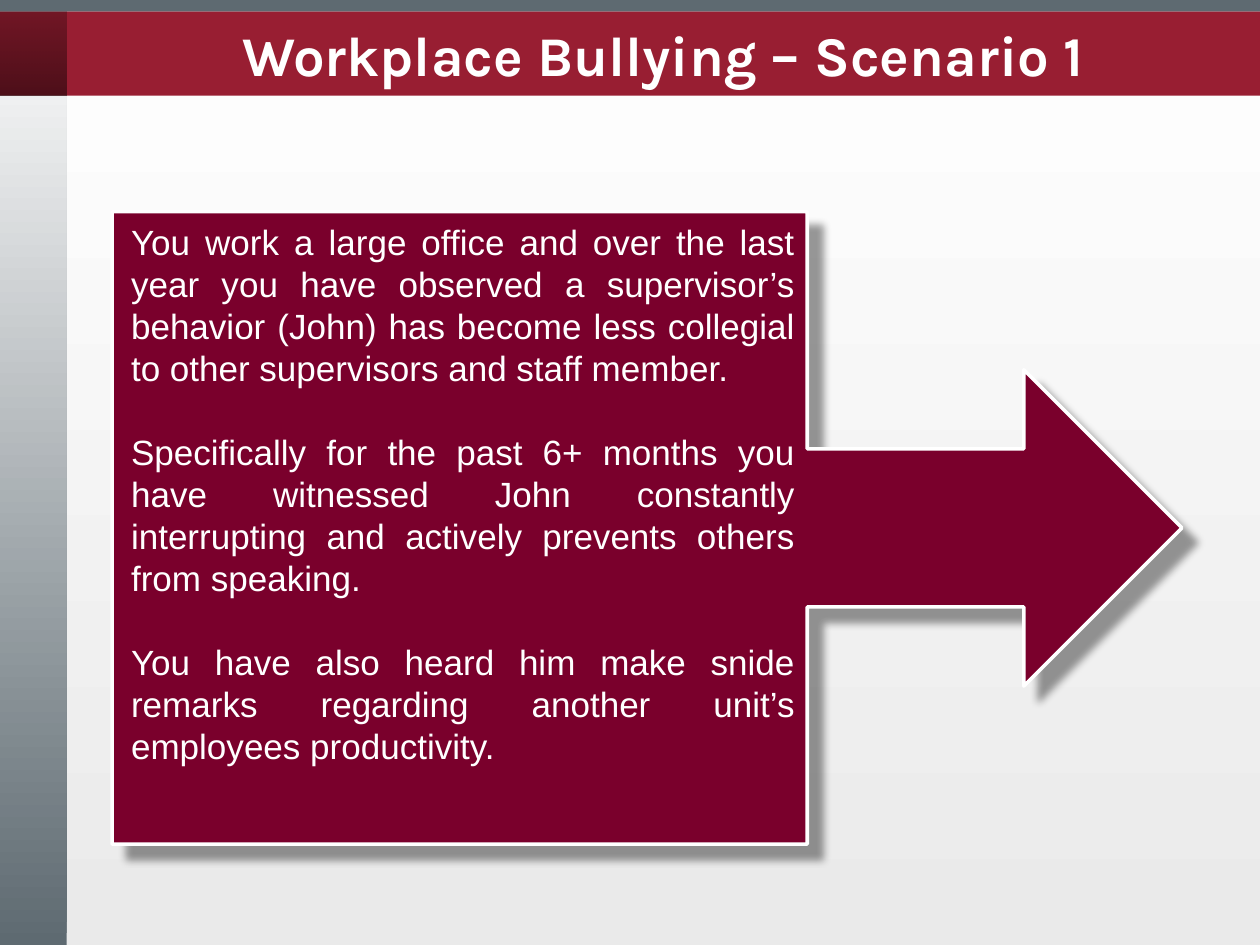
from dataclasses import dataclass

from lxml.etree import SubElement
from pptx import Presentation
from pptx.dml.color import RGBColor
from pptx.enum.shapes import MSO_SHAPE as Shape
from pptx.enum.text import MSO_ANCHOR as Anchor, MSO_AUTO_SIZE as AutoSize, PP_ALIGN as Align
from pptx.oxml.ns import qn
from pptx.util import Inches, Pt

TITLE = "Workplace Bullying – Scenario 1"
SCENARIO = [
    "You work a large office and over the last year you have observed a supervisor’s "
    "behavior (John) has become less collegial to other supervisors and staff member.",
    "Specifically for the past 6+ months you have witnessed John constantly "
    "interrupting and actively prevents others from speaking.",
    "You have also heard him make snide remarks regarding another unit’s "
    "employees productivity.",
]


@dataclass(frozen=True)
class Theme:
    white: str = "FFFFFF"
    black: str = "000000"
    mist: str = "EAEAEA"
    slate: str = "5E6A71"
    crimson: str = "981E32"
    maroon: str = "7A002C"
    title_font: str = "Karla"
    body_font: str = "Arial"
    title_size: int = 32
    body_size: int = 20


THEME = Theme()
WIDTH, HEIGHT = 10, 7.5
SIDEBAR, STRIP, BANNER, BLEED = 0.53, 0.09, 0.67, 0.02
BANNER_END = STRIP + BANNER
TITLE_TOP = 0.17


def box(left, top, width, height):
    return [Inches(length) for length in (left, top, width, height)]


def fade_up(fill, bottom, top, alphas=()):
    """Vertical gradient from the bottom colour to the top one, with optional opacity percents."""
    fill.gradient()
    fill.gradient_angle = 90
    for stop, color in zip(fill.gradient_stops, (bottom, top)):
        stop.color.rgb = RGBColor.from_string(color)
    if alphas:
        colors = fill._xPr.iter(qn("a:srgbClr"))
        for color, alpha in zip(colors, alphas):
            SubElement(color, qn("a:alpha"), val=str(alpha * 1000))


def add_panel(slide, place, color=None, fade=None, kind=Shape.RECTANGLE):
    panel = slide.shapes.add_shape(kind, *box(*place))
    panel.shadow.inherit = False
    panel.line.fill.background()
    if fade:
        fade_up(panel.fill, *fade)
    else:
        panel.fill.solid()
        panel.fill.fore_color.rgb = RGBColor.from_string(color)
    return panel


def cast_shadow(panel, color, alpha, blur, distance, angle):
    effects = panel._element.spPr.find(qn("a:effectLst"))
    shadow = SubElement(
        effects, qn("a:outerShdw"), blurRad=str(Pt(blur)), dist=str(Pt(distance)),
        dir=str(angle * 60000), algn="tl", rotWithShape="0")
    tint = SubElement(shadow, qn("a:srgbClr"), val=color)
    SubElement(tint, qn("a:alpha"), val=str(alpha * 1000))


def write(holder, place, paragraphs, *, font, size, color, bold=False,
          align=Align.LEFT, anchor=Anchor.TOP, spacing=1.0, gap=0):
    """Place a placeholder in front of the panels and fill it with unbulleted paragraphs."""
    holder.left, holder.top, holder.width, holder.height = box(*place)
    holder.element.getparent().append(holder.element)
    frame = holder.text_frame
    frame.word_wrap = True
    frame.auto_size = AutoSize.NONE
    frame.vertical_anchor = anchor
    for index, text in enumerate(paragraphs):
        paragraph = frame.add_paragraph() if index else frame.paragraphs[0]
        props = paragraph._p.get_or_add_pPr()
        props.set("marL", "0")
        props.set("indent", "0")
        SubElement(props, qn("a:buNone"))
        paragraph.alignment = align
        paragraph.line_spacing = spacing
        paragraph.space_before = Pt(gap if index else 0)
        paragraph.space_after = Pt(0)
        run = paragraph.add_run()
        run.text = text
        run.font.name, run.font.size, run.font.bold = font, Pt(size), bold
        run.font.color.rgb = RGBColor.from_string(color)


def main():
    deck = Presentation()
    deck.slide_width, deck.slide_height = Inches(WIDTH), Inches(HEIGHT)
    slide = deck.slides.add_slide(deck.slide_layouts[1])
    fade_up(slide.background.fill, THEME.mist, THEME.white)

    add_panel(slide, (0, 0, SIDEBAR, HEIGHT), fade=(THEME.slate, THEME.white))
    add_panel(slide, (0, STRIP, WIDTH, BANNER), THEME.crimson)
    add_panel(slide, (-BLEED, STRIP, SIDEBAR + BLEED, BANNER),
              fade=(THEME.black, THEME.black, (50, 25)))
    add_panel(slide, (-BLEED, 0, WIDTH + BLEED, STRIP), THEME.slate)

    callout = add_panel(slide, (0.89, 1.68, 8.49, 5.02), THEME.maroon,
                        kind=Shape.RIGHT_ARROW_CALLOUT)
    callout.line.color.rgb = RGBColor.from_string(THEME.white)
    callout.line.width = Pt(2)
    cast_shadow(callout, THEME.black, alpha=40, blur=4, distance=12, angle=45)

    write(slide.shapes.title,
          (SIDEBAR, TITLE_TOP, WIDTH - SIDEBAR, BANNER_END - TITLE_TOP), [TITLE],
          font=THEME.title_font, size=THEME.title_size, color=THEME.white, bold=True,
          align=Align.CENTER, anchor=Anchor.MIDDLE, spacing=0.9)
    write(slide.placeholders[1], (0.94, 1.7, 5.47, 4.48), SCENARIO,
          font=THEME.body_font, size=THEME.body_size, color=THEME.white,
          align=Align.JUSTIFY, gap=1.2 * THEME.body_size)
    deck.save("out.pptx")


if __name__ == "__main__":
    main()
